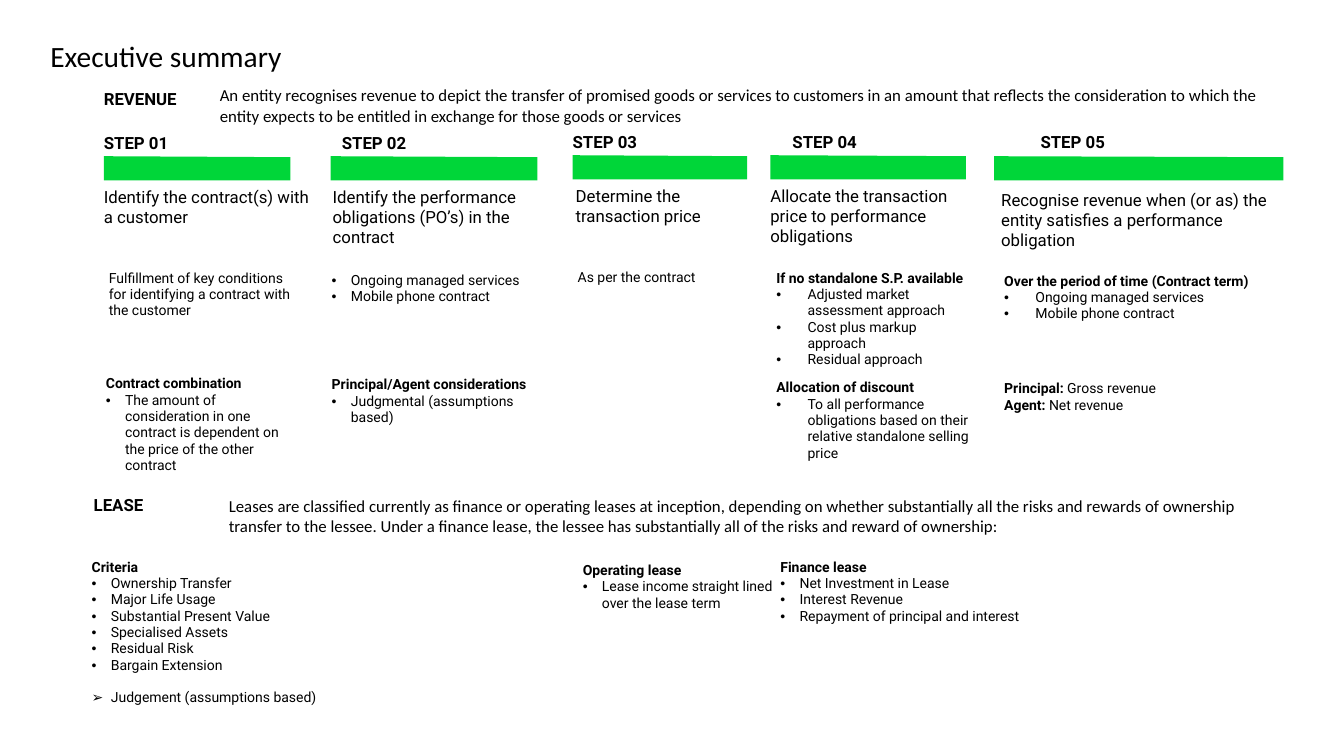
from pptx import Presentation
from pptx.dml.color import RGBColor
from pptx.enum.text import MSO_ANCHOR
from pptx.oxml.ns import qn
from pptx.util import Inches, Pt
from lxml import etree

MIDDLE, TOP = MSO_ANCHOR.MIDDLE, MSO_ANCHOR.TOP
BLACK, GREEN = "000000", "00D639"
NO_GRID_STYLE = "{2D5ABB26-0587-4C30-8999-92F81FD0307C}"


def color(value):
    return RGBColor.from_string(value)


def add_text(text, left, top, width, height, size=12, anchor=TOP, name="Roboto", bold=False, after=0):
    frame = slide.shapes.add_textbox(Inches(left), Inches(top), Inches(width), Inches(height)).text_frame
    settings = {"word_wrap": True, "vertical_anchor": anchor, "margin_left": 0,
                "margin_right": 0, "margin_top": 0, "margin_bottom": 0}
    for key, value in settings.items():
        setattr(frame, key, value)
    paragraph = frame.paragraphs[0]
    paragraph.text = text
    paragraph.space_after = Pt(after)
    for run in paragraph.runs:
        for key, value in {"size": Pt(size), "name": name, "bold": bold}.items():
            setattr(run.font, key, value)
        run.font.color.rgb = color(BLACK)


presentation = Presentation()
presentation.slide_width = Inches(13.33)
presentation.slide_height = Inches(7.5)
slide = presentation.slides.add_slide(presentation.slide_layouts[6])

# Title and section introductions
add_text("Executive summary", 0.5, 0.38, 12.34, 0.37, size=21, name="Calibri")
sections = [
    ("REVENUE", 1.03, 0.86, 2.18, 0.79, 10.54,
     "An entity recognises revenue to depict the transfer of promised goods or services to customers "
     "in an amount that reflects the consideration to which the entity expects to be entitled in "
     "exchange for those goods or services"),
    ("LEASE", 0.93, 4.89, 2.27, 4.86, 10.28,
     "Leases are classified currently as finance or operating leases at inception, depending on whether "
     "substantially all the risks and rewards of ownership transfer to the lessee. Under a finance lease, "
     "the lessee has substantially all of the risks and reward of ownership:"),
]
for heading, left, top, intro_left, intro_top, intro_width, intro in sections:
    add_text(heading, left, top, 2.04, 0.24, anchor=MIDDLE, bold=True, after=6)
    add_text(intro, intro_left, intro_top, intro_width, 0.51, anchor=MIDDLE, name="Calibri")

# Five steps: label left, label top, bar left, bar width, text left, text top, text width, text
steps = [
    (1.03, 1.3, 1.03, 1.85, 1.03, 1.85, 2.04, "Identify the contract(s) with a customer"),
    (3.39, 1.3, 3.28, 2.05, 3.3, 1.85, 2.16, "Identify the performance obligations (PO’s) in the contract"),
    (5.68, 1.29, 5.68, 1.73, 5.71, 1.84, 2.04, "Determine the\vtransaction price"),
    (7.86, 1.29, 7.64, 1.94, 7.64, 1.84, 2.08, "Allocate the transaction price to performance obligations"),
    (10.32, 1.29, 9.86, 2.87, 9.93, 1.88, 2.79,
     "Recognise revenue when (or as) the entity satisfies a performance obligation"),
]
bar_tops = [1.55, 1.55, 1.54, 1.54, 1.55]
for number, (step, bar_top) in enumerate(zip(steps, bar_tops), start=1):
    label_left, label_top, bar_left, bar_width, text_left, text_top, text_width, text = step
    add_text(f"STEP {number:02}", label_left, label_top, 2.08, 0.24, anchor=MIDDLE, bold=True, after=6)
    bar_right, bar_bottom = bar_left + bar_width, bar_top + 0.24
    builder = slide.shapes.build_freeform(Inches(bar_left), Inches(bar_top))
    corners = [(bar_right, bar_top + 0.01), (bar_right, bar_bottom), (bar_left, bar_bottom)]
    builder.add_line_segments([(Inches(x), Inches(y)) for x, y in corners], close=True)
    bar = builder.convert_to_shape()
    bar.shadow.inherit = False
    bar.fill.solid()
    bar.fill.fore_color.rgb = color(GREEN)
    bar.line.fill.background()
    add_text(text, text_left, text_top, text_width, 0.59)

# Detail tables: left, top, width, height, bullet indent, lines of (bold part, plain part, bullet)
details = [
    (0.98, 2.63, 2.12, 0.98, 0, [
        ("", "Fulfillment of key conditions for identifying a contract with the customer", "")]),
    (3.19, 2.65, 2.41, 0.68, 0.19, [
        ("", "Ongoing managed services", "•"), ("", "Mobile phone contract", "•")]),
    (5.63, 2.62, 1.89, 0.98, 0, [("", "As per the contract", "")]),
    (7.6, 2.63, 2.12, 1.1, 0.31, [
        ("If no standalone S.P. available", "", ""),
        ("", "Adjusted market assessment approach", "•"),
        ("", "Cost plus markup approach", "•"),
        ("", "Residual approach", "•")]),
    (9.86, 2.66, 2.67, 0.68, 0.31, [
        ("Over the period of time (Contract term)", "", ""),
        ("", "Ongoing managed services", "•"), ("", "Mobile phone contract", "•")]),
    (0.95, 3.68, 2.12, 0.98, 0.19, [
        ("Contract combination", "", ""),
        ("", "The amount of consideration in one contract is dependent on the price of the other contract", "•")]),
    (3.19, 3.69, 2.17, 0.6, 0.19, [
        ("Principal/Agent considerations", "", ""), ("", "Judgmental (assumptions based)", "•")]),
    (7.6, 3.72, 2.12, 0.98, 0.31, [
        ("Allocation of discount", "", ""),
        ("", "To all performance obligations based on their relative standalone selling price", "•")]),
    (9.86, 3.73, 2.67, 0.44, 0, [
        ("Principal: ", "Gross revenue", ""), ("Agent: ", "Net revenue", "")]),
    (0.81, 5.5, 3.19, 1.77, 0.19, [
        ("Criteria", "", ""),
        ("", "Ownership Transfer", "•"),
        ("", "Major Life Usage", "•"),
        ("", "Substantial Present Value", "•"),
        ("", "Specialised Assets", "•"),
        ("", "Residual Risk", "•"),
        ("", "Bargain Extension", "•"),
        ("", "Judgement (assumptions based)", "➢")]),
    (5.68, 5.53, 2.17, 0.98, 0.19, [
        ("Operating lease", "", ""), ("", "Lease income straight lined over the lease term", "•")]),
    (7.64, 5.5, 3.19, 0.98, 0.19, [
        ("Finance lease", "", ""),
        ("", "Net Investment in Lease", "•"),
        ("", "Interest Revenue", "•"),
        ("", "Repayment of principal and interest", "•")]),
]
for left, top, width, height, indent, lines in details:
    table = slide.shapes.add_table(1, 1, Inches(left), Inches(top), Inches(width), Inches(height)).table
    table.first_row = table.horz_banding = False
    table._tbl.tblPr.find(qn("a:tableStyleId")).text = NO_GRID_STYLE
    cell = table.cell(0, 0)
    cell.fill.background()
    frame = cell.text_frame
    for index, (strong, plain, bullet) in enumerate(lines):
        paragraph = frame.add_paragraph() if index else frame.paragraphs[0]
        if bullet == "➢":
            paragraph.space_before = Pt(11.7)
        if bullet:
            properties = paragraph._p.get_or_add_pPr()
            properties.set("marL", str(Inches(indent)))
            properties.set("indent", str(-Inches(indent)))
            etree.SubElement(properties, qn("a:buFont"), typeface="Arial")
            etree.SubElement(properties, qn("a:buChar"), char=bullet)
        for text, bold in ((strong, True), (plain, False)):
            if text:
                run = paragraph.add_run()
                run.text = text
                for key, value in {"size": Pt(10), "name": "Roboto", "bold": bold}.items():
                    setattr(run.font, key, value)
                run.font.color.rgb = color(BLACK)

presentation.save("out.pptx")
